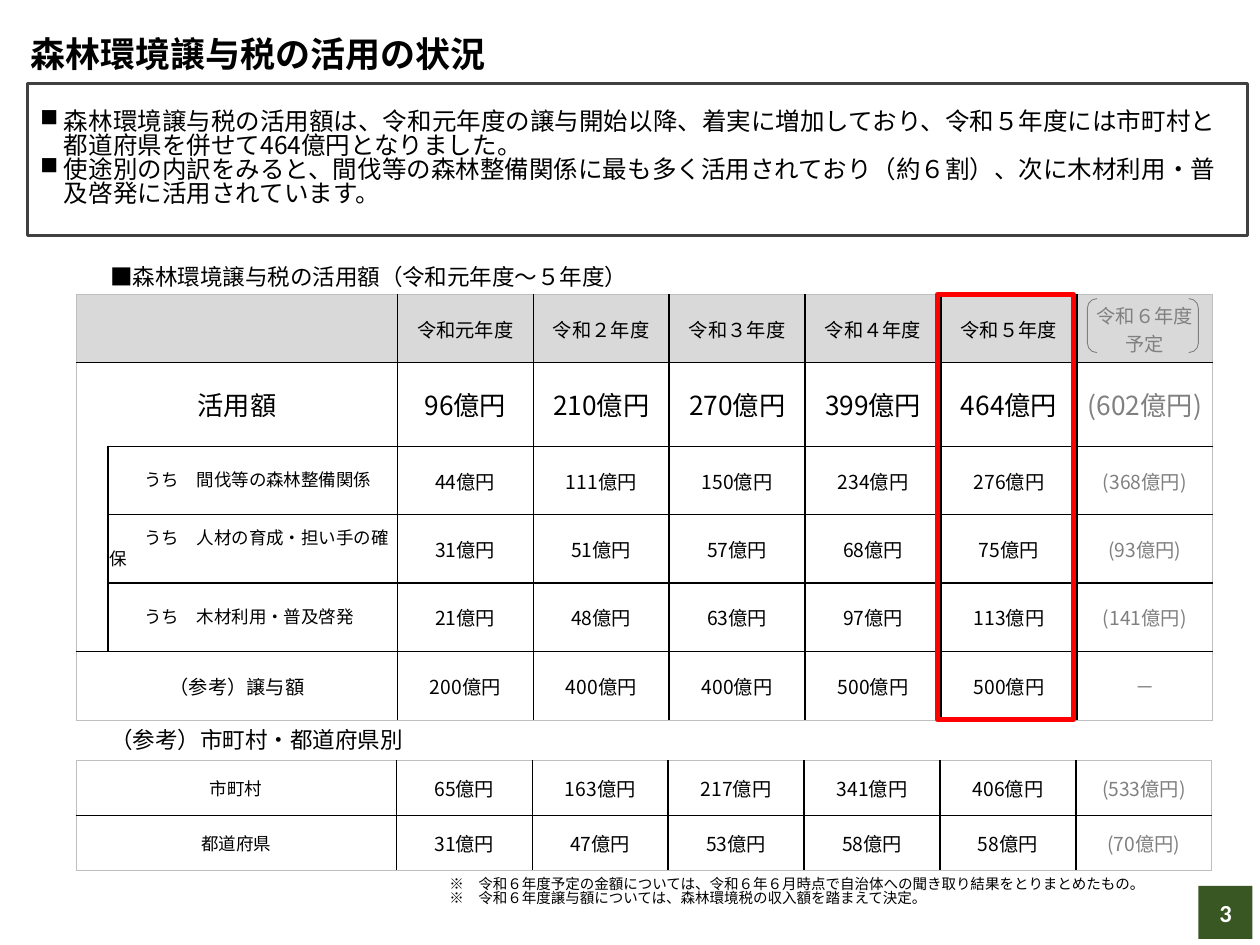
import pptx
import pptx.dml.color
import pptx.enum.shapes
import pptx.enum.text
import pptx.oxml.ns
import pptx.util
import lxml.etree

Cm, Pt = pptx.util.Cm, pptx.util.Pt
SHAPE = pptx.enum.shapes.MSO_SHAPE
ALIGN = pptx.enum.text.PP_ALIGN
MIDDLE = pptx.enum.text.MSO_ANCHOR.MIDDLE
qn = pptx.oxml.ns.qn
JAPANESE, LATIN = "Noto Sans CJK JP", "Calibri"
BLACK, GREY, EDGE, HEADER = "000000", "808080", "BFBFBF", "D9D9D9"


def rgb(value):
    return pptx.dml.color.RGBColor.from_string(value)


def style(paragraph, size, color=BLACK, font=JAPANESE, bold=False, align=ALIGN.CENTER):
    paragraph.alignment = align
    for run in paragraph.runs:
        run.font.size = Pt(size)
        run.font.bold = bold
        run.font.name = font
        run.font.color.rgb = rgb(color)
        east_asian = lxml.etree.SubElement(run.font._element, qn("a:ea"))
        east_asian.set("typeface", font)


deck = pptx.Presentation()
deck.slide_width, deck.slide_height = Cm(25.4), Cm(19.05)
slide = deck.slides.add_slide(deck.slide_layouts[6])
shapes = slide.shapes

# Tables: usage by purpose, then usage by kind of municipality
usage = [
    ["", "", "令和元年度", "令和２年度", "令和３年度", "令和４年度", "令和５年度", "令和６年度予定"],
    ["活用額", "", "96億円", "210億円", "270億円", "399億円", "464億円", "(602億円)"],
    ["", "　　うち　間伐等の森林整備関係", "44億円", "111億円", "150億円", "234億円", "276億円", "(368億円)"],
    ["", "　　うち　人材の育成・担い手の確保", "31億円", "51億円", "57億円", "68億円", "75億円", "(93億円)"],
    ["", "　　うち　木材利用・普及啓発", "21億円", "48億円", "63億円", "97億円", "113億円", "(141億円)"],
    ["（参考）譲与額", "", "200億円", "400億円", "400億円", "500億円", "500億円", "－"],
]
by_government = [
    ["市町村", "65億円", "163億円", "217億円", "341億円", "406億円", "(533億円)"],
    ["都道府県", "31億円", "47億円", "53億円", "58億円", "58億円", "(70億円)"],
]
YEAR_WIDTH = 2.74
tables = [
    (usage, 1.55, 5.94, [0.63, 5.83], [1.35, 1.69, 1.38, 1.38, 1.38, 1.38]),
    (by_government, 1.53, 15.33, [6.46], [1.11, 1.11]),
]
for rows, left, top, label_widths, heights in tables:
    widths = label_widths + [YEAR_WIDTH] * 6
    table = shapes.add_table(len(rows), len(widths), Cm(left), Cm(top),
                             Cm(sum(widths)), Cm(sum(heights))).table
    table.first_row = table.horz_banding = False
    for column, width in zip(table.columns, widths):
        column.width = Cm(width)
    for row, height in zip(table.rows, heights):
        row.height = Cm(height)
    last_row, last_column = len(rows) - 1, len(widths) - 1
    is_usage = rows is usage
    if is_usage:
        for row in (0, 1, 5):
            table.cell(row, 0).merge(table.cell(row, 1))
        table.cell(2, 0).merge(table.cell(4, 0))

    for r, row in enumerate(rows):
        for c, words in enumerate(row):
            cell = table.cell(r, c)
            is_header = is_usage and r == 0
            is_label = c < len(label_widths)
            is_purpose = is_usage and c == 1
            cell.vertical_anchor = MIDDLE
            roomy = not is_label and (not is_usage or r in (0, 5))
            cell.margin_left = cell.margin_right = Cm(0.24 if roomy else 0.03)
            cell.margin_top = cell.margin_bottom = Cm(0.12 if roomy else 0.01)
            if words:
                cell.text_frame.text = words
                small_label = is_purpose or (is_label and not is_usage)
                size = 15 if is_usage and r == 1 else 10 if small_label else 11
                style(cell.text_frame.paragraphs[0], size,
                      GREY if c == last_column else BLACK,
                      LATIN if is_purpose else JAPANESE,
                      align=ALIGN.LEFT if is_purpose else ALIGN.CENTER)

            # Black rules inside, pale outer edge, open notch under the total
            sides = {"L": EDGE if c == 0 else BLACK,
                     "R": EDGE if c == last_column else BLACK,
                     "T": EDGE if r == 0 else BLACK,
                     "B": EDGE if r == last_row else BLACK}
            if is_usage and c == 0 and r in (1, 2):
                sides["B" if r == 1 else "T"] = None
            properties = cell._tc.get_or_add_tcPr()
            for side, color in sides.items():
                rule = lxml.etree.SubElement(properties, qn(f"a:ln{side}"))
                rule.set("w", str(Pt(0.5 if color == EDGE else 1)))
                if color:
                    paint = lxml.etree.SubElement(rule, qn("a:solidFill"))
                    lxml.etree.SubElement(paint, qn("a:srgbClr")).set("val", color)
                else:
                    lxml.etree.SubElement(rule, qn("a:noFill"))
            if is_header:
                cell.fill.solid()
                cell.fill.fore_color.rgb = rgb(HEADER)
            else:
                cell.fill.background()

# Title, table captions and footnotes
notes = ("※　令和６年度予定の金額については、令和６年６月時点で自治体への聞き取り結果をとりまとめたもの。\n"
         "※　令和６年度譲与額については、森林環境税の収入額を踏まえて決定。")
texts = [
    ("森林環境譲与税の活用の状況", -0.18, 0.38, 10.77, 1.4, 20, True, ALIGN.CENTER),
    ("■森林環境譲与税の活用額（令和元年度～５年度）", 1.98, 5.16, 12.93, 0.81, 12.9, False, ALIGN.LEFT),
    ("（参考）市町村・都道府県別", 1.98, 14.5, 6.45, 0.81, 12.9, False, ALIGN.LEFT),
    (notes, 8.81, 17.5, 15.34, 0.97, 8.3, False, ALIGN.LEFT),
]
for words, left, top, width, height, size, bold, align in texts:
    frame = shapes.add_textbox(Cm(left), Cm(top), Cm(width), Cm(height)).text_frame
    frame.word_wrap = True
    frame.vertical_anchor = MIDDLE
    frame.text = words
    for paragraph in frame.paragraphs:
        style(paragraph, size, bold=bold, align=align)
        if words == notes:
            paragraph.line_spacing = 0.8

# Highlighted year, planned-year brackets, page number and summary box
outlines = [
    (SHAPE.RECTANGLE, 18.9, 5.94, 2.74, 8.56, None, "FF0000", 3),
    (SHAPE.DOUBLE_BRACKET, 21.92, 6.02, 2.24, 1.09, None, GREY, 0.5),
    (SHAPE.RECTANGLE, 24.16, 17.86, 1.09, 1.07, "385723", None, 0),
    (SHAPE.RECTANGLE, 0.56, 1.68, 24.59, 3.07, None, "404040", 1.5),
]
drawn = []
for kind, left, top, width, height, fill, line, weight in outlines:
    shape = shapes.add_shape(kind, Cm(left), Cm(top), Cm(width), Cm(height))
    shape.shadow.inherit = False
    if fill:
        shape.fill.solid()
        shape.fill.fore_color.rgb = rgb(fill)
    else:
        shape.fill.background()
    if line:
        shape.line.color.rgb = rgb(line)
        shape.line.width = Pt(weight)
    else:
        shape.line.fill.background()
    drawn.append(shape)
highlight, brackets, page_number, summary = drawn
brackets.adjustments[0] = 0.18

page_number.text_frame.text = "3"
style(page_number.text_frame.paragraphs[0], 14, "FFFFFF", LATIN, True)

summary.text_frame.vertical_anchor = MIDDLE
summary.text_frame.text = (
    "森林環境譲与税の活用額は、令和元年度の譲与開始以降、着実に増加しており、"
    "令和５年度には市町村と都道府県を併せて464億円となりました。\n"
    "使途別の内訳をみると、間伐等の森林整備関係に最も多く活用されており（約６割）、"
    "次に木材利用・普及啓発に活用されています。")
for paragraph in summary.text_frame.paragraphs:
    style(paragraph, 14, align=ALIGN.LEFT)
    paragraph.line_spacing = 0.82
    indents = paragraph._p.get_or_add_pPr()
    indents.set("marL", str(Cm(0.48)))
    indents.set("indent", str(Cm(-0.48)))
    lxml.etree.SubElement(indents, qn("a:buChar")).set("char", "■")

deck.save("out.pptx")
